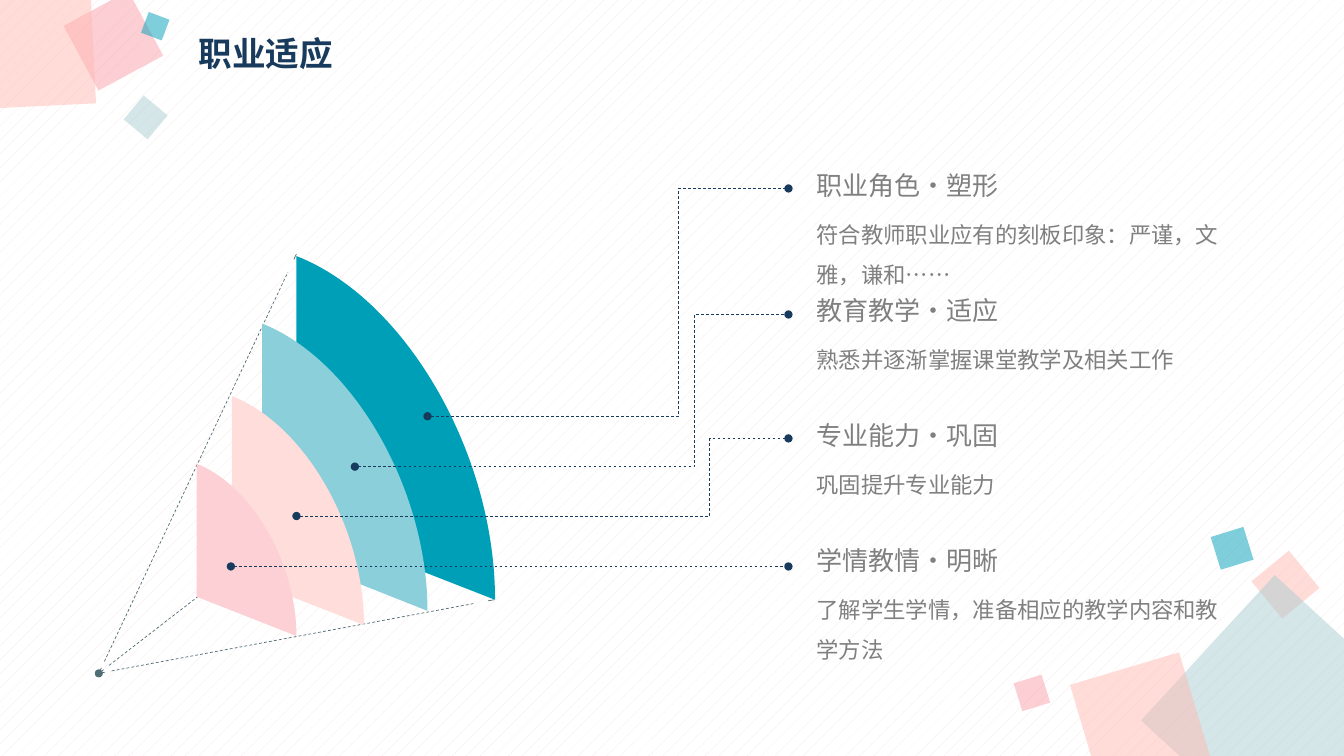
import math
from dataclasses import dataclass

import lxml.etree
import pptx
import pptx.dml.color
import pptx.enum.dml
import pptx.enum.lang
import pptx.enum.shapes
import pptx.enum.text
import pptx.oxml
import pptx.oxml.ns
import pptx.util
from pptx.util import Inches


@dataclass(frozen=True)
class Theme:
    """Colours, type sizes and fonts of the slide."""
    navy: str = "183A5D"
    slate: str = "506C74"
    grey: str = "808080"
    teal: str = "009FB8"
    mist: str = "AACED2"
    peach: str = "FFBBB3"
    pink: str = "FAA0AA"
    light_teal: str = "8BCFDB"
    light_peach: str = "FEDDDA"
    light_pink: str = "FCD0D5"
    back: str = "FFFFFF"
    hatch: str = "F5E5E4"
    title: float = 24
    heading: float = 18.6
    body: float = 16
    line: float = 0.5
    font: str = "Noto Sans CJK SC"
    alt_font: str = "Roboto Condensed"


T = Theme()

SQUARES = [
    (12.51, 5.56, 0.48, 320.6, T.peach),
    (11.72, 6.11, 1.96, 42.6, T.mist),
    (10.75, 6.61, 1.13, 343.4, T.peach),
    (10.09, 6.73, 0.29, 342.8, T.pink),
    (12.05, 5.27, 0.34, 342.8, T.teal),
    (0.76, 0.04, 0.73, 331.6, T.pink),
    (-0.46, -0.32, 1.38, 357.2, T.peach),
    (1.29, 1.01, 0.31, 309.8, T.mist),
    (1.43, 0.15, 0.22, 290.5, T.teal),
]
APEX = (0.98, 6.68)
RAY_ENDS = [(4.9, 5.95), (2.94, 2.52), (2.93, 5.17)]
SECTORS = [
    ((2.94, 5.18), (2.94, 2.54), (4.91, 5.95), T.teal),
    ((2.6, 5.41), (2.6, 3.21), (4.24, 6.06), T.light_teal),
    ((2.3, 5.69), (2.3, 3.93), (3.61, 6.2), T.light_peach),
    ((1.95, 5.92), (1.95, 4.6), (2.94, 6.31), T.light_pink),
]
ARC = 0.55
LEADERS = [
    ((4.24, 4.13), 1.87, 6.73),
    ((3.52, 4.63), 3.12, 6.89),
    ((2.94, 5.12), 4.35, 7.04),
    ((2.29, 5.62), 5.62, 5.06),
]
LEADER_END = 7.82
ITEMS = [
    ("职业角色·塑形", "符合教师职业应有的刻板印象：严谨，文雅，谦和……", 0.86, T.font),
    ("教育教学·适应", "熟悉并逐渐掌握课堂教学及相关工作", 0.46, T.alt_font),
    ("专业能力·巩固", "巩固提升专业能力", 0.46, T.font),
    ("学情教情·明晰", "了解学生学情，准备相应的教学内容和教学方法", 0.86, T.font),
]
ITEM_TOP, ITEM_STEP, BODY_OFFSET = 1.63, 1.24, 0.38


def rgb(code):
    """Return the colour for a hex code."""
    return pptx.dml.color.RGBColor.from_string(code)


def add_xml(parent, tag, **attributes):
    """Append a drawing element to a parent element."""
    return lxml.etree.SubElement(parent, pptx.oxml.ns.qn(tag), **attributes)


def paint(sp, color, alpha=None):
    """Fill a shape plainly, without outline or shadow."""
    sp.shadow.inherit = False
    sp.fill.solid()
    sp.fill.fore_color.rgb = rgb(color)
    sp.line.fill.background()
    if alpha:
        clr = sp._element.spPr.find(".//" + pptx.oxml.ns.qn("a:srgbClr"))
        add_xml(clr, "a:alpha", val=str(alpha * 1000))


def add_square(s, number, left, top, size, angle, color):
    """Add a turned, half-transparent square to the slide's layout."""
    sp = s.shapes.add_shape(
        pptx.enum.shapes.MSO_SHAPE.RECTANGLE,
        Inches(left), Inches(top), Inches(size), Inches(size))
    sp.rotation = angle
    paint(sp, color, 50)
    sp._element.nvSpPr.cNvPr.set("id", str(100 + number))
    s.slide_layout.shapes._spTree.append(sp._element)


def add_sector(s, corner, top, right, color):
    """Add a skewed quarter ellipse with one curved side."""
    near_top = [t + ARC * (r - c) for c, t, r in zip(corner, top, right)]
    near_right = [r + ARC * (t - c) for c, t, r in zip(corner, top, right)]
    fb = s.shapes.build_freeform(Inches(right[0]), Inches(right[1]))
    fb.add_line_segments(
        [(Inches(x), Inches(y)) for x, y in (corner, top, near_top, near_right, right)],
        close=False)
    sp = fb.convert_to_shape()
    sides = sp._element.spPr.findall(".//" + pptx.oxml.ns.qn("a:lnTo"))
    curve = add_xml(sides[0].getparent(), "a:cubicBezTo")
    for side in sides[2:]:
        curve.append(side[0])
        side.getparent().remove(side)
    paint(sp, color)


def add_line(s, start, end, color, dashed=True, elbow_x=None):
    """Add a thin straight line, or a dotted-end elbow line."""
    kinds = pptx.enum.shapes.MSO_CONNECTOR
    c = s.shapes.add_connector(
        kinds.ELBOW if elbow_x else kinds.STRAIGHT,
        *(Inches(v) for v in (*start, *end)))
    c.line.color.rgb = rgb(color)
    c.line.width = pptx.util.Pt(T.line)
    if dashed:
        c.line.dash_style = pptx.enum.dml.MSO_LINE.DASH
    props = c._element.spPr
    if elbow_x:
        for tag in ("a:headEnd", "a:tailEnd"):
            add_xml(props.find(pptx.oxml.ns.qn("a:ln")), tag, type="oval")
        share = (elbow_x - start[0]) / (end[0] - start[0])
        av = props.find(".//" + pptx.oxml.ns.qn("a:avLst"))
        add_xml(av, "a:gd", name="adj1", fmla=f"val {round(share * 100000)}")
    add_xml(props, "a:effectLst")


def add_ray(s, end):
    """Add a ray from the apex: dashed, with short solid ends."""
    length = math.dist(APEX, end)

    def at(d):
        """Return the point at a distance along the ray."""
        return tuple(a + (b - a) * d / length for a, b in zip(APEX, end))

    add_line(s, at(length - 0.06), at(length), T.slate, dashed=False)
    add_line(s, at(0.13), at(length - 0.2), T.slate)
    add_line(s, at(0), at(0.06), T.slate, dashed=False)


def format_text(sp, text, size, color, font=T.font, bold=False, spacing=1.0):
    """Set the text of a shape and format it."""
    tf = sp.text_frame
    tf.word_wrap = True
    tf.text = text
    p = tf.paragraphs[0]
    p.alignment = pptx.enum.text.PP_ALIGN.LEFT
    p.line_spacing = spacing
    r = p.runs[0]
    r.font.size = pptx.util.Pt(size)
    r.font.bold = bold
    r.font.color.rgb = rgb(color)
    r.font.name = font
    r.font.language_id = pptx.enum.lang.MSO_LANGUAGE_ID.SIMPLIFIED_CHINESE
    add_xml(r.font._element, "a:ea", typeface=font)


def add_text(s, left, top, width, height, *args, **kwargs):
    """Add a formatted text box."""
    sp = s.shapes.add_textbox(Inches(left), Inches(top), Inches(width), Inches(height))
    format_text(sp, *args, **kwargs)


def set_title(s, text):
    """Place and format the title placeholder."""
    sp = s.shapes.title
    sp.left, sp.top, sp.width, sp.height = map(Inches, (1.87, 0.26, 6.13, 0.58))
    format_text(sp, text, T.title, T.navy, bold=True, spacing=0.9)
    sp.text_frame.auto_size = pptx.enum.text.MSO_AUTO_SIZE.NONE
    sp.text_frame.vertical_anchor = pptx.enum.text.MSO_ANCHOR.MIDDLE


def main():
    """Build and save the slide."""
    prs = pptx.Presentation()
    prs.slide_width, prs.slide_height = Inches(13.33), Inches(7.5)
    s = prs.slides.add_slide(prs.slide_layouts[5])
    fill = s.background.fill
    fill.patterned()
    fill.pattern = pptx.enum.dml.MSO_PATTERN.PERCENT_5
    fill.fore_color.rgb, fill.back_color.rgb = rgb(T.hatch), rgb(T.back)
    for number, square in enumerate(SQUARES):
        add_square(s, number, *square)
    set_title(s, "职业适应")
    for end in RAY_ENDS:
        add_ray(s, end)
    for sector in SECTORS:
        add_sector(s, *sector)
    dot = s.shapes.add_shape(pptx.enum.shapes.MSO_SHAPE.OVAL, Inches(APEX[0] - 0.04),
                             Inches(APEX[1] - 0.04), Inches(0.08), Inches(0.08))
    paint(dot, T.slate)
    for start, y, elbow_x in LEADERS:
        add_line(s, start, (LEADER_END, y), T.navy, elbow_x=elbow_x)
    for i, (heading, body, height, font) in enumerate(ITEMS):
        top = ITEM_TOP + i * ITEM_STEP
        add_text(s, 8, top, 3.94, 0.44, heading, T.heading, T.grey)
        add_text(s, 8, top + BODY_OFFSET, 4.38, height, body, T.body, T.grey,
                 font=font, spacing=1.5)
    prs.save("out.pptx")


if __name__ == "__main__":
    main()
